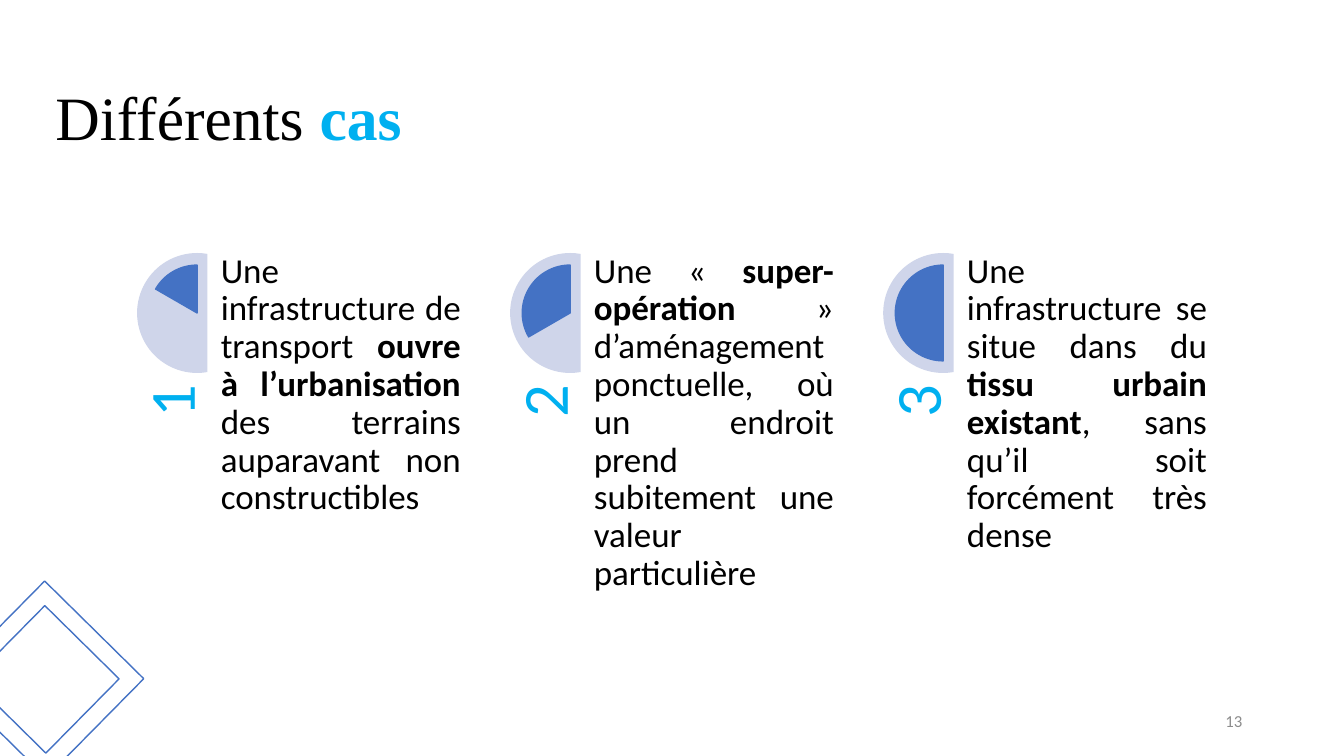
from pptx import Presentation
from pptx.dml.color import RGBColor
from pptx.enum import shapes, text
from pptx.util import Inches, Pt

BLACK, CYAN, BLUE, PALE, GREY = "000000", "00B0F0", "4472C4", "CFD5EA", "8C8C8C"
COLUMN_PITCH = 3.7

# Each case is a list of (words, bold) runs
CASES = [
    [("Une infrastructure de transport ", False),
     ("ouvre à l’urbanisation", True),
     (" des terrains auparavant non constructibles", False)],
    [("Une « ", False),
     ("super-opération", True),
     (" » d’aménagement ponctuelle, où un endroit prend subitement une valeur particulière", False)],
    [("Une infrastructure se situe dans du ", False),
     ("tissu urbain existant", True),
     (", sans qu’il soit forcément très dense", False)],
]


def color(hex_value):
    return RGBColor.from_string(hex_value)


def add_text(slide, box, runs, size, hex_value, align, anchor, font="Calibri",
             inset=0.0, spacing=0.9, rotation=0):
    """Add a one-paragraph text box from (words, bold) runs."""
    shape = slide.shapes.add_textbox(*map(Inches, box))
    shape.rotation = rotation
    frame = shape.text_frame
    frame.word_wrap = True
    frame.vertical_anchor = anchor
    frame.margin_left = frame.margin_right = Inches(inset)
    frame.margin_top = frame.margin_bottom = Inches(inset / 2)
    paragraph = frame.paragraphs[0]
    paragraph.alignment = align
    paragraph.line_spacing = spacing
    paragraph.font.name = font
    paragraph.font.size = Pt(size)
    paragraph.font.color.rgb = color(hex_value)
    for words, bold in runs:
        run = paragraph.add_run()
        run.text = words
        run.font.bold = bold
    return paragraph


def add_preset(slide, preset, box, fill=None, line=None, adjustments=()):
    shape = slide.shapes.add_shape(preset, *map(Inches, box))
    shape.shadow.inherit = False
    if fill:
        shape.fill.solid()
        shape.fill.fore_color.rgb = color(fill)
    else:
        shape.fill.background()
    if line:
        shape.line.color.rgb = color(line)
        shape.line.width = Pt(1)
    else:
        shape.line.fill.background()
    for index, value in enumerate(adjustments):
        shape.adjustments[index] = value
    return shape


def add_case(slide, number, runs):
    """Add one column: gauge, turned number and description."""
    left = 1.36 + (number - 1) * COLUMN_PITCH
    add_preset(slide, shapes.MSO_SHAPE.CHORD, (left, 2.51, 1.19, 1.19),
               fill=PALE, adjustments=(48, 168))
    # The gauge grows by 60 degrees per case
    add_preset(slide, shapes.MSO_SHAPE.PIE, (left + 0.12, 2.63, 0.95, 0.95),
               fill=BLUE, line=BLUE, adjustments=(162 - 36 * number, 162))
    add_text(slide, (left - 1.37, 5.19, 3.45, 0.71), [(str(number), False)], 46, CYAN,
             text.PP_ALIGN.RIGHT, text.MSO_ANCHOR.BOTTOM, rotation=270)
    add_text(slide, (left + 0.83, 2.51, 2.38, 4.76), runs, 25, BLACK,
             text.PP_ALIGN.JUSTIFY, text.MSO_ANCHOR.TOP)


def main():
    presentation = Presentation()
    presentation.slide_width = Inches(13.33)
    presentation.slide_height = Inches(7.5)
    slide = presentation.slides.add_slide(presentation.slide_layouts[6])

    # Title
    title = add_text(slide, (0.45, 0.45, 7.35, 1.5), [("Différents", False), (" cas", True)],
                     44, BLACK, text.PP_ALIGN.LEFT, text.MSO_ANCHOR.MIDDLE,
                     font="Times New Roman", inset=0.1)
    title.runs[1].font.color.rgb = color(CYAN)

    # Slide number
    add_text(slide, (9.42, 6.95, 3, 0.4), [("13", False)], 12, GREY,
             text.PP_ALIGN.RIGHT, text.MSO_ANCHOR.MIDDLE, inset=0.1, spacing=1.0)

    # Three cases
    for number, runs in enumerate(CASES, start=1):
        add_case(slide, number, runs)

    # Corner ornament
    ornament = add_preset(slide, shapes.MSO_SHAPE.FRAME, (-0.24, 6.05, 1.38, 1.38), line=BLUE)
    ornament.rotation = 314.6

    presentation.save("out.pptx")


if __name__ == "__main__":
    main()
